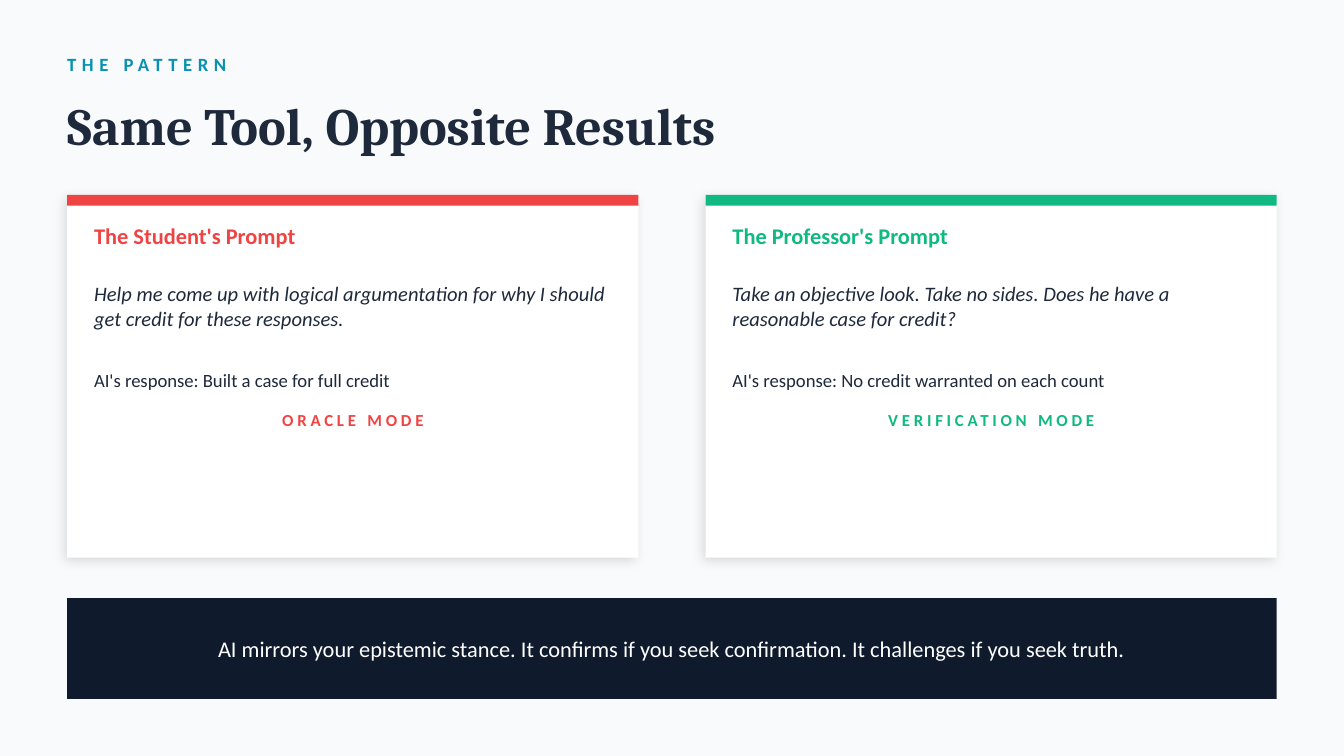
from dataclasses import dataclass

from lxml.etree import SubElement
from pptx import Presentation
from pptx.dml.color import RGBColor
from pptx.enum.shapes import MSO_SHAPE
from pptx.enum.text import MSO_ANCHOR, PP_ALIGN
from pptx.oxml.ns import qn
from pptx.slide import Slide
from pptx.util import Inches, Pt

COLUMNS, ROWS = 100, 56.25
MARGIN, PADDING = 5, 2
CARD_WIDTH, CARD_STEP, CARD_TOP = 42.5, 47.5, 14.5


def color(value):
    return RGBColor.from_string(value)


@dataclass
class SlideBuilder:
    """Draw styled elements on a slide, in cells a tenth of an inch wide."""

    slide: Slide
    body_font: str = "Calibri"
    title_font: str = "Cambria"
    ink: str = "1E293B"
    accent: str = "0891B2"
    paper: str = "FFFFFF"
    band: str = "0F1B2D"
    cell: int = Inches(0.1)

    def place(self, *cells):
        return [round(count * self.cell) for count in cells]

    def background(self, fill):
        self.slide.background.fill.solid()
        self.slide.background.fill.fore_color.rgb = color(fill)

    def rectangle(self, column, row, width, height, fill):
        shape = self.slide.shapes.add_shape(
            MSO_SHAPE.RECTANGLE, *self.place(column, row, width, height))
        shape.shadow.inherit = False
        shape.fill.solid()
        shape.fill.fore_color.rgb = color(fill)
        shape.line.fill.background()
        return shape

    def soft_shadow(self, shape):
        effects = shape._element.spPr.find(qn("a:effectLst"))
        shadow = SubElement(effects, qn("a:outerShdw"), blurRad=str(Pt(6)),
                            dist=str(Pt(2)), dir=str(135 * 60000),
                            algn="bl", rotWithShape="0")
        black = SubElement(shadow, qn("a:srgbClr"), val="000000")
        SubElement(black, qn("a:alpha"), val="12000")

    def text(self, column, row, width, height, words, size, fill=None,
             font=None, bold=False, italic=False, spacing=0, centered=False):
        box = self.slide.shapes.add_textbox(
            *self.place(column, row, width, height))
        frame = box.text_frame
        frame.word_wrap = True
        frame.vertical_anchor = MSO_ANCHOR.MIDDLE
        frame.margin_left = frame.margin_right = 0
        frame.margin_top = frame.margin_bottom = 0
        paragraph = frame.paragraphs[0]
        paragraph.alignment = PP_ALIGN.CENTER if centered else PP_ALIGN.LEFT
        run = paragraph.add_run()
        run.text = words
        run.font.name = font or self.body_font
        run.font.size = Pt(size)
        run.font.bold = bold
        run.font.italic = italic
        run.font.color.rgb = color(fill or self.ink)
        if spacing:
            run._r.get_or_add_rPr().set("spc", str(spacing * 100))

    def card(self, column, accent, heading, prompt, response, mode):
        panel = self.rectangle(column, CARD_TOP, CARD_WIDTH, 27, self.paper)
        self.soft_shadow(panel)
        self.rectangle(column, CARD_TOP, CARD_WIDTH, 0.8, accent)
        left, width = column + PADDING, CARD_WIDTH - 2 * PADDING
        self.text(left, 16.3, width, 2.5, heading, 12, accent, bold=True)
        self.text(left, 19.5, width, 6.5, prompt, 11, italic=True)
        self.text(left, 26.5, width, 3.5, response, 10)
        self.text(left, 30, width, 2.5, mode, 9, accent, bold=True,
                  spacing=2, centered=True)

    def banner(self, words):
        width = COLUMNS - 2 * MARGIN
        self.rectangle(MARGIN, 44.5, width, 7.5, self.band)
        self.text(MARGIN + PADDING, 44.5, width - 2 * PADDING, 7.5, words, 12,
                  self.paper, centered=True)


CARDS = [
    ("EF4444", "The Student's Prompt",
     "Help me come up with logical argumentation for why I should get credit "
     "for these responses.",
     "AI's response: Built a case for full credit", "ORACLE MODE"),
    ("10B981", "The Professor's Prompt",
     "Take an objective look. Take no sides. Does he have a reasonable case "
     "for credit?",
     "AI's response: No credit warranted on each count", "VERIFICATION MODE"),
]


def main():
    presentation = Presentation()
    presentation.slide_width = Inches(COLUMNS / 10)
    presentation.slide_height = Inches(ROWS / 10)
    slide = presentation.slides.add_slide(presentation.slide_layouts[6])
    builder = SlideBuilder(slide)
    builder.background("F8FAFC")
    builder.text(MARGIN, 3, 30, 3.5, "THE PATTERN", 10, builder.accent,
                 bold=True, spacing=3)
    builder.text(MARGIN, 6.5, COLUMNS - 2 * MARGIN, 5.5,
                 "Same Tool, Opposite Results", 28, font=builder.title_font,
                 bold=True)
    for index, content in enumerate(CARDS):
        builder.card(MARGIN + index * CARD_STEP, *content)
    builder.banner("AI mirrors your epistemic stance. It confirms if you seek "
                   "confirmation. It challenges if you seek truth.")
    presentation.save("out.pptx")


if __name__ == "__main__":
    main()
